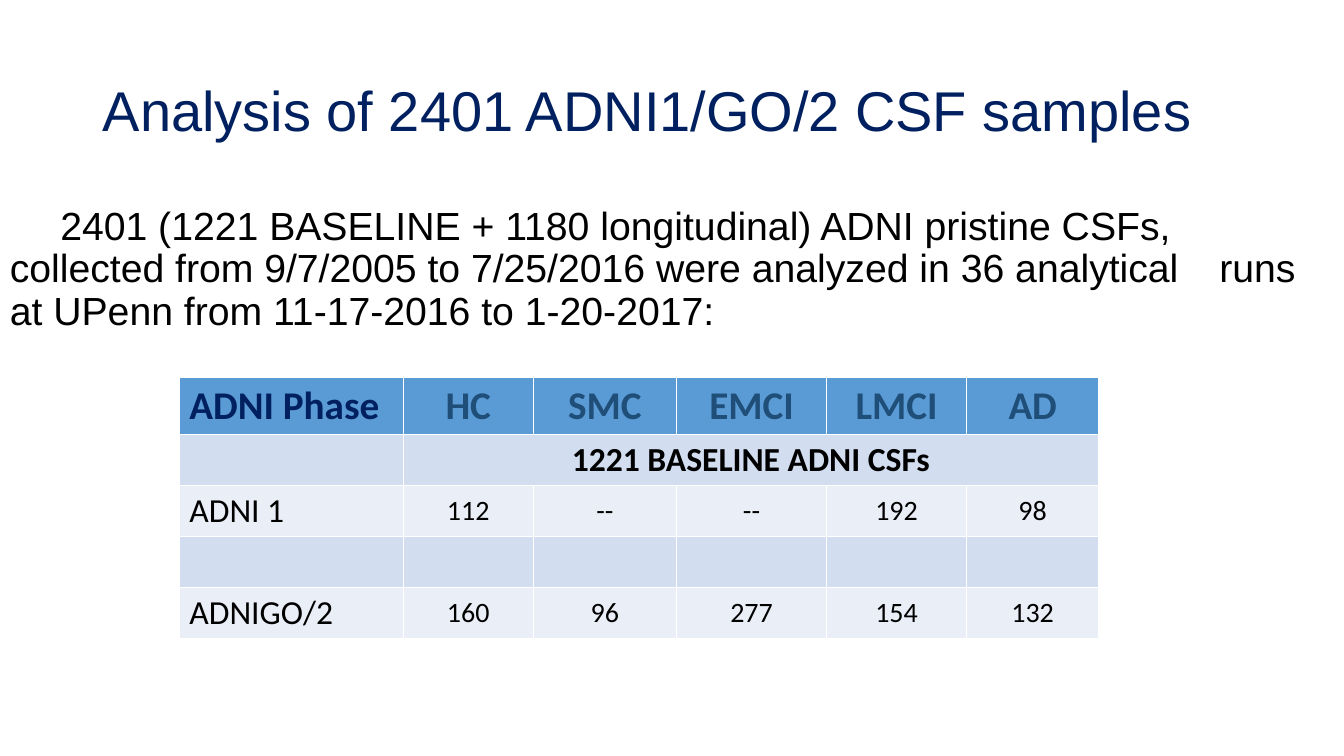
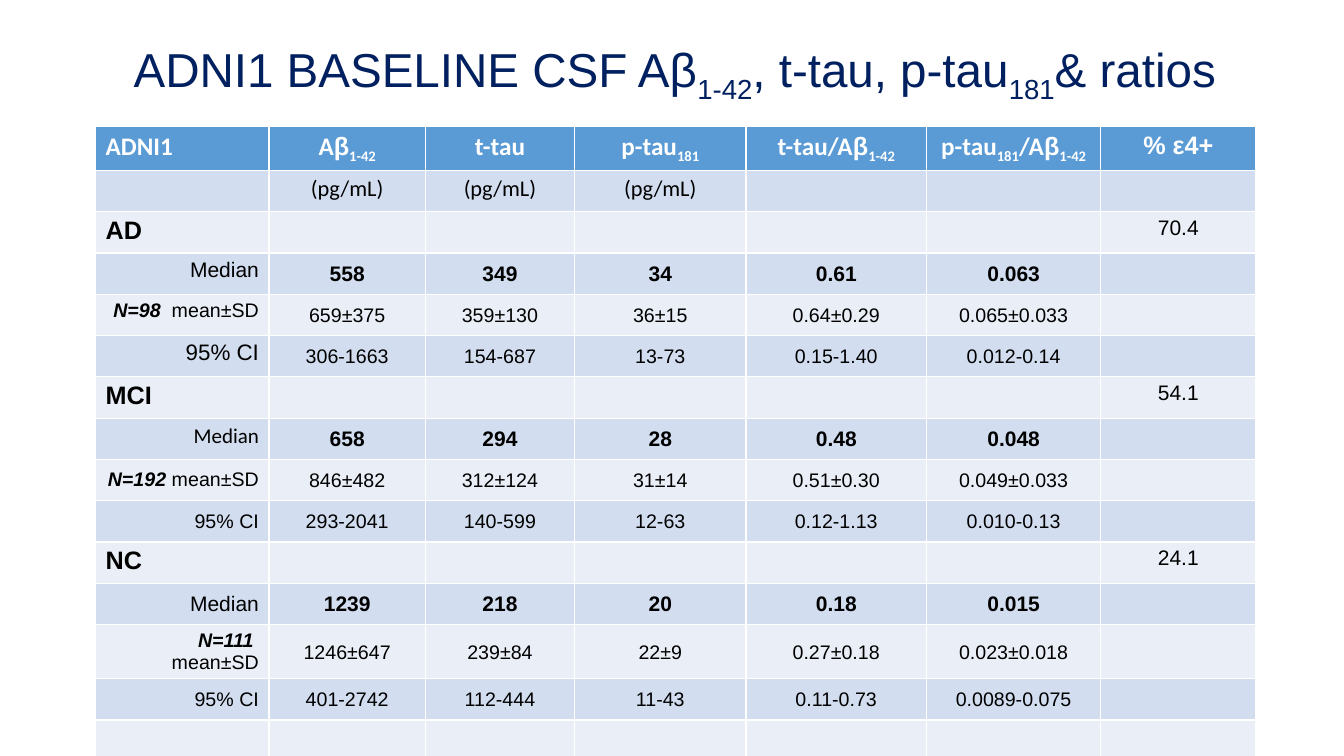
"""Build two slides of CSF sample counts and baseline results."""
from pptx import Presentation
from pptx.dml.color import RGBColor
from pptx.enum.text import MSO_ANCHOR, PP_ALIGN
from pptx.util import Cm, Pt

LEFT, MID, RIGHT = PP_ALIGN.LEFT, PP_ALIGN.CENTER, PP_ALIGN.RIGHT
TOP, CENTER = MSO_ANCHOR.TOP, MSO_ANCHOR.MIDDLE
NAVY, STEEL, WHITE, BLACK = "002060", "1F4E79", "FFFFFF", "000000"
HEAD, BANDS = "5B9BD5", ("EAEFF7", "D2DEEF")
SUBS = ("1-42", "181")


def write(frame, text, size, color=BLACK, face="Arial", bold=False, align=LEFT, anchor=CENTER, space=None):
    """Write one paragraph; bars part the pieces that differ in style."""
    frame.word_wrap = True
    frame.vertical_anchor = anchor
    para = frame.paragraphs[0]
    para.alignment = align
    para.line_spacing = space
    para.font.size, para.font.name, para.font.bold = Pt(size), face, bold
    para.font.color.rgb = RGBColor.from_string(color)
    for piece in text.split("|"):
        run = para.add_run()
        run.text = piece
        if piece in SUBS:
            run._r.get_or_add_rPr().set("baseline", "-25000")
        elif piece == "β":
            run.font.name = "Arial"
        elif piece.startswith("N="):
            run.font.bold = run.font.italic = True


def add_grid(slide, left, top, widths, heights):
    """Add a table with a blue head and banded rows."""
    grid = slide.shapes.add_table(len(heights), len(widths), Cm(left), Cm(top),
                                  Cm(sum(widths)), Cm(sum(heights))).table
    for col, width in zip(grid.columns, widths):
        col.width = Cm(width)
    for i, (row, height) in enumerate(zip(grid.rows, heights)):
        row.height = Cm(height)
        for cell in row.cells:
            cell.fill.solid()
            cell.fill.fore_color.rgb = RGBColor.from_string(BANDS[i % 2] if i else HEAD)
    return grid


deck = Presentation()
deck.slide_width, deck.slide_height = Cm(33.87), Cm(19.05)
slides = []
for text, size, align, box in (
    ("Analysis of 2401 ADNI1/GO/2 CSF samples", 40, LEFT, (2.34, 1.02, 29.21, 3.68)),
    ("ADNI1 BASELINE CSF Aβ|1-42|, t-tau, p-tau|181|& ratios", 34, MID, (1.27, -0.08, 31.47, 3.68)),
):
    slide = deck.slides.add_slide(deck.slide_layouts[5])
    title = slide.shapes.title
    title.left, title.top, title.width, title.height = map(Cm, box)
    write(title.text_frame, text, size, NAVY, align=align, space=0.9)
    slides.append(slide)
count, base = slides

body = count.shapes.add_textbox(Cm(0), Cm(5.08), Cm(33.87), Cm(4))
write(body.text_frame,
      "\t2401 (1221 BASELINE + 1180 longitudinal) ADNI pristine CSFs, "
      "\tcollected from 9/7/2005 to 7/25/2016 were analyzed in 36 analytical "
      "\truns at UPenn from 11-17-2016 to 1-20-2017:", 28, anchor=TOP, space=0.9)

grid = add_grid(count, 4.52, 9.5, (5.64, 3.28, 3.61, 3.78, 3.53, 3.33), [1.44] + [1.29] * 4)
grid.cell(1, 1).merge(grid.cell(1, 5))
write(grid.cell(1, 1).text_frame, "1221 BASELINE ADNI CSFs", 24, face="Calibri", bold=True, align=MID)
grid.cell(1, 1).vertical_anchor = CENTER
for i, row in (
    (0, ("ADNI Phase", "HC", "SMC", "EMCI", "LMCI", "AD")),
    (2, ("ADNI 1", "112", "--", "--", "192", "98")),
    (4, ("ADNIGO/2", "160", "96", "277", "154", "132")),
):
    for j, text in enumerate(row):
        cell = grid.cell(i, j)
        size = 28 if i == 0 else 20 if j else 24
        color = BLACK if i else STEEL if j else NAVY
        write(cell.text_frame, text, size, color, "Calibri", i == 0, MID if j else LEFT)
        cell.vertical_anchor = CENTER

grid = add_grid(base, 2.41, 3.18, (4.37, 3.94, 3.76, 4.32, 4.55, 4.39, 3.91), [1.04] * 15)
heads = ("ADNI1", "A|β|1-42", "t-tau", "p-tau|181", "t-tau/A|β|1-42", "p-tau|181|/A|β|1-42", "% ε4+")
for j, text in enumerate(heads):
    face = "Arial" if j == 6 else "Calibri"
    write(grid.cell(0, j).text_frame, text, 18, WHITE, face, True, MID if j else LEFT, TOP)
for j in range(1, 4):
    write(grid.cell(1, j).text_frame, "(pg/mL)", 16, face="Calibri", align=MID, anchor=TOP)

groups = (
    ("AD", "70.4", (
        ("Median", 15, "Arial", TOP, "558 349 34 0.61 0.063"),
        ("N=98  |mean±SD", 14, "Arial", TOP, "659±375 359±130 36±15 0.64±0.29 0.065±0.033"),
        ("95% CI", 16, "Arial", TOP, "306-1663 154-687 13-73 0.15-1.40 0.012-0.14"))),
    ("MCI", "54.1", (
        ("Median", 15, "Calibri", TOP, "658 294 28 0.48 0.048"),
        ("N=192 |mean±SD", 14, "Arial", CENTER, "846±482 312±124 31±14 0.51±0.30 0.049±0.033"),
        ("95% CI", 14, "Arial", CENTER, "293-2041 140-599 12-63 0.12-1.13 0.010-0.13"))),
    ("NC", "24.1", (
        ("Median", 15, "Arial", CENTER, "1239 218 20 0.18 0.015"),
        ("N=111  |mean±SD", 14, "Arial", CENTER, "1246±647 239±84 22±9 0.27±0.18 0.023±0.018"),
        ("95% CI", 14, "Arial", CENTER, "401-2742 112-444 11-43 0.11-0.73 0.0089-0.075"))),
)
for g, (name, share, stats) in enumerate(groups):
    first = 2 + 4 * g
    write(grid.cell(first, 0).text_frame, name, 18, bold=True, anchor=TOP)
    write(grid.cell(first, 6).text_frame, share, 15, align=MID, anchor=TOP)
    for i, (label, size, face, anchor, values) in enumerate(stats, first + 1):
        cell = grid.cell(i, 0)
        write(cell.text_frame, label, size, face=face, align=RIGHT)
        cell.vertical_anchor = anchor
        main = label == "Median"
        for j, text in enumerate(values.split(), 1):
            cell = grid.cell(i, j)
            write(cell.text_frame, text, 15 if main else 14, bold=main, align=MID, space=1.07)
            cell.vertical_anchor = CENTER
            cell.margin_left = cell.margin_right = Cm(0.18)
            cell.margin_top = cell.margin_bottom = 0

deck.save("out.pptx")
